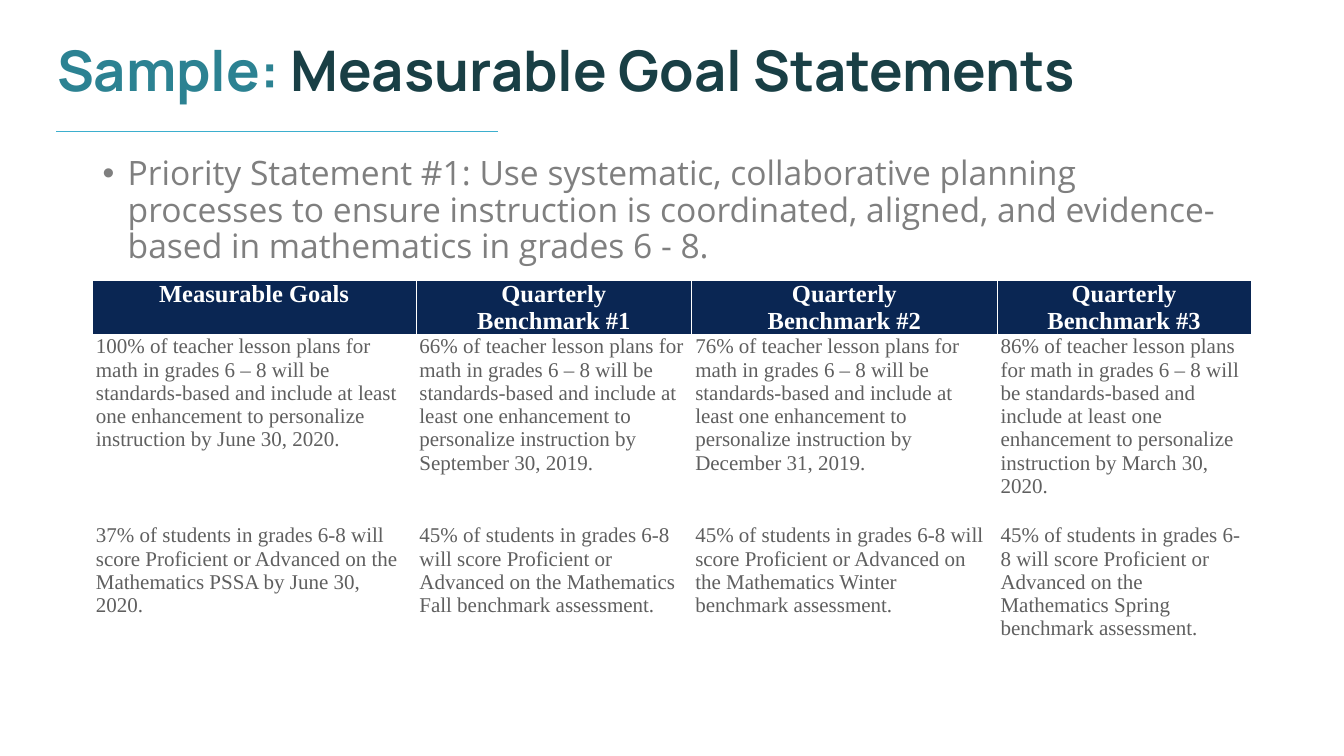
from dataclasses import dataclass

from lxml.etree import SubElement
from pptx import Presentation
from pptx.dml.color import RGBColor
from pptx.enum.shapes import MSO_CONNECTOR
from pptx.enum.text import MSO_ANCHOR, MSO_AUTO_SIZE, PP_ALIGN
from pptx.oxml.ns import qn
from pptx.util import Pt


@dataclass(frozen=True)
class Theme:
    teal: str = "2C8292"
    dark: str = "193F45"
    rule: str = "3DAFCE"
    grey: str = "7F7F7F"
    navy: str = "0A2653"
    ink: str = "5F5F5F"
    white: str = "FFFFFF"
    head: str = "Manrope"
    body: str = "Open Sans"
    cell: str = "Times New Roman"
    title_size: int = 80
    body_size: int = 48
    head_size: int = 35
    cell_size: int = 30


THEME = Theme()
LEFT, WIDTH = 132, 1655
COLS = (462, 394, 436, 363)
ROWS = (76, 270, 242)

PRIORITY = (
    "Priority Statement #1: Use systematic, collaborative planning processes "
    "to ensure instruction is coordinated, aligned, and evidence-based in "
    "mathematics in grades 6 - 8."
)
PLANS = (
    "{} of teacher lesson plans for math in grades 6 – 8 will be "
    "standards-based and include at least one enhancement to personalize "
    "instruction by {}."
)
SCORES = (
    "{} of students in grades 6-8 will score Proficient or Advanced on the "
    "Mathematics {}."
)
HEADS = [["Measurable Goals"]] + [
    ["Quarterly", f"Benchmark #{n}"] for n in (1, 2, 3)
]
GOALS = [
    PLANS.format(*goal)
    for goal in (
        ("100%", "June 30, 2020"),
        ("66%", "September 30, 2019"),
        ("76%", "December 31, 2019"),
        ("86%", "March 30, 2020"),
    )
]
TESTS = [SCORES.format("37%", "PSSA by June 30, 2020")] + [
    SCORES.format("45%", f"{term} benchmark assessment")
    for term in ("Fall", "Winter", "Spring")
]


def add_run(para, text, font, size, color, bold=False):
    run = para.add_run()
    run.text = text
    run.font.name = font
    run.font.size = Pt(size)
    run.font.bold = bold
    run.font.color.rgb = RGBColor.from_string(color)


def place(holder, left, top, width, height, anchor):
    """Move a placeholder, set its text frame up and return its paragraph."""
    holder.left, holder.top = Pt(left), Pt(top)
    holder.width, holder.height = Pt(width), Pt(height)
    frame = holder.text_frame
    frame.word_wrap = True
    frame.auto_size = MSO_AUTO_SIZE.NONE
    frame.vertical_anchor = anchor
    frame.margin_left = frame.margin_right = Pt(14.4)
    frame.margin_top = frame.margin_bottom = Pt(7.2)
    para = frame.paragraphs[0]
    para.alignment = PP_ALIGN.LEFT
    para.line_spacing = 0.9
    para.space_before = Pt(0)
    return para


def add_title(slide):
    para = place(slide.shapes.title, 67, 0, WIDTH, 209, MSO_ANCHOR.MIDDLE)
    for text, color in (
        ("Sample:", THEME.teal),
        (" Measurable Goal Statements", THEME.dark),
    ):
        add_run(para, text, THEME.head, THEME.title_size, color, True)


def add_list(slide):
    para = place(slide.placeholders[1], LEFT, 217, WIDTH, 685, MSO_ANCHOR.TOP)
    props = para._p.get_or_add_pPr()
    props.set("marL", str(Pt(36)))
    props.set("indent", str(-Pt(36)))
    SubElement(props, qn("a:buChar"), char="•")
    add_run(para, PRIORITY, THEME.body, THEME.body_size, THEME.grey)


def add_rule(slide):
    line = slide.shapes.add_connector(
        MSO_CONNECTOR.STRAIGHT, Pt(80), Pt(187), Pt(711), Pt(187)
    )
    line.line.color.rgb = RGBColor.from_string(THEME.rule)
    line.line.width = Pt(1)
    SubElement(line._element.spPr, qn("a:effectLst"))


def add_border(cell, base):
    """Draw white cell edges, with the bottom one as wide as base."""
    props = cell._tc.get_or_add_tcPr()
    for side, width in (("L", 1), ("R", 1), ("T", 1), ("B", base)):
        edge = SubElement(props, qn(f"a:ln{side}"), w=str(Pt(width)))
        fill = SubElement(edge, qn("a:solidFill"))
        SubElement(fill, qn("a:srgbClr"), val=THEME.white)


def fill_cell(cell, lines, head):
    cell.margin_left = cell.margin_right = Pt(5)
    cell.margin_top = cell.margin_bottom = Pt(0)
    cell.vertical_anchor = MSO_ANCHOR.TOP
    add_border(cell, 3 if head else 1)
    if head:
        cell.fill.solid()
        cell.fill.fore_color.rgb = RGBColor.from_string(THEME.navy)
    else:
        cell.fill.background()
    size = THEME.head_size if head else THEME.cell_size
    color = THEME.white if head else THEME.ink
    frame = cell.text_frame
    for num, text in enumerate(lines):
        para = frame.add_paragraph() if num else frame.paragraphs[0]
        para.alignment = PP_ALIGN.CENTER if head else PP_ALIGN.LEFT
        add_run(para, text, THEME.cell, size, color, head)


def add_goals(slide):
    table = slide.shapes.add_table(
        len(ROWS), len(COLS), Pt(LEFT), Pt(401), Pt(WIDTH), Pt(sum(ROWS))
    ).table
    table.horz_banding = False
    for col, width in zip(table.columns, COLS):
        col.width = Pt(width)
    for row, height in zip(table.rows, ROWS):
        row.height = Pt(height)
    data = [HEADS, [[text] for text in GOALS], [[text] for text in TESTS]]
    for row, cells in enumerate(data):
        for col, lines in enumerate(cells):
            fill_cell(table.cell(row, col), lines, row == 0)


def main():
    deck = Presentation()
    deck.slide_width, deck.slide_height = Pt(1919.52), Pt(1080)
    slide = deck.slides.add_slide(deck.slide_layouts[1])
    add_title(slide)
    add_rule(slide)
    add_list(slide)
    add_goals(slide)
    deck.save("out.pptx")


if __name__ == "__main__":
    main()
